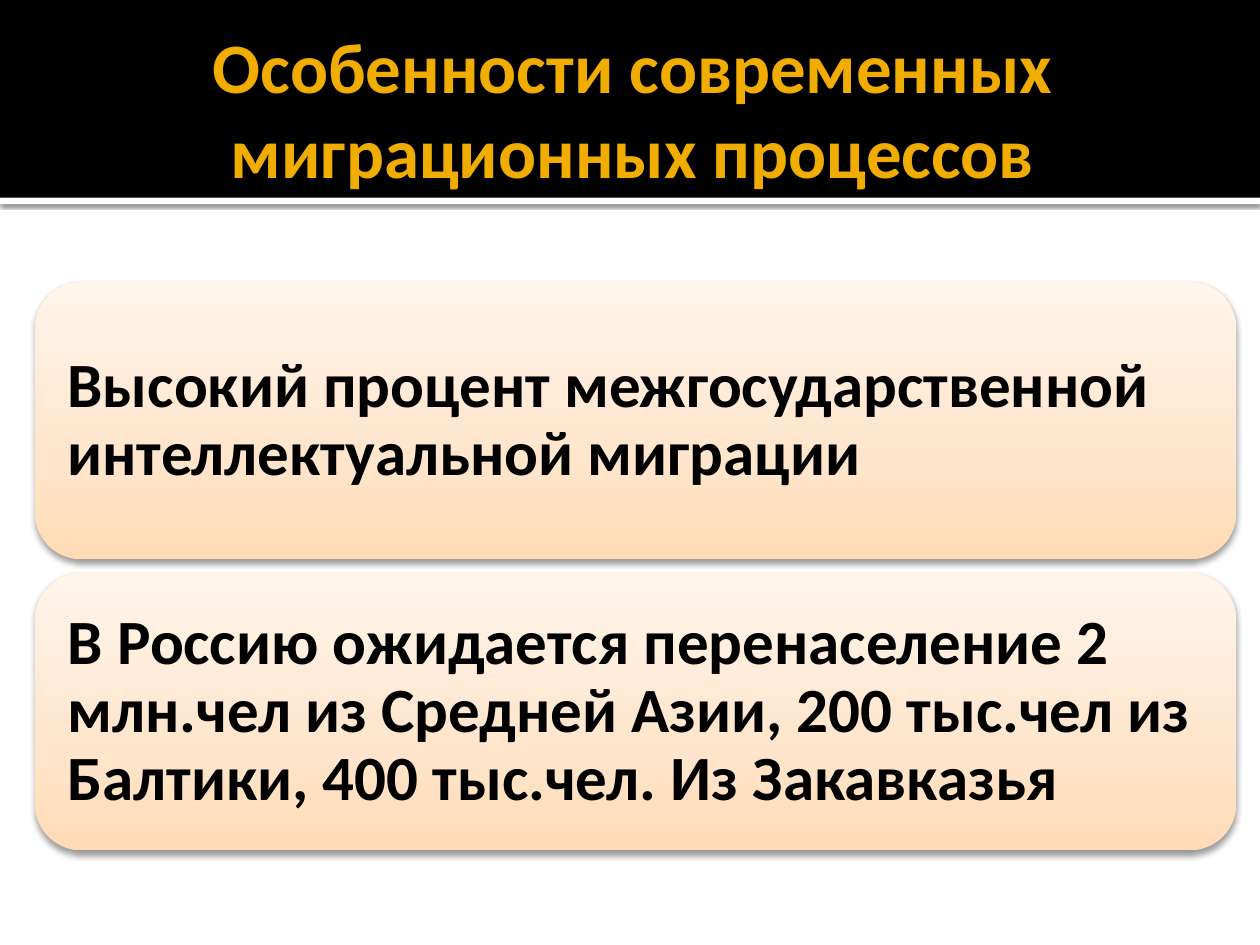
"""Build a slide on the features of modern migration processes."""
from copy import deepcopy

from lxml import etree
from pptx import Presentation
from pptx.dml.color import RGBColor
from pptx.enum.shapes import MSO_SHAPE as Preset
from pptx.enum.text import MSO_ANCHOR as Anchor, PP_ALIGN as Align
from pptx.oxml import parse_xml
from pptx.oxml.ns import nsdecls, qn
from pptx.util import Inches, Pt

COLORS = {
    "white": "FFFFFF",
    "black": "000000",
    "gold": "F0AD00",
    "peach": "FFDBB5",
    "light peach": "FFE5CB",
    "cream": "FFF5EB",
}
CARD_STOPS = [(0, "peach"), (0.35, "light peach"), (1, "cream")]
FEATURES = [
    "Высокий процент межгосударственной интеллектуальной миграции",
    "В Россию ожидается перенаселение 2 млн.чел из Средней Азии, "
    "200 тыс.чел из Балтики, 400 тыс.чел. Из Закавказья",
]


def add_panel(preset, left, top, width, height, shadow=None):
    panel = slide.shapes.add_shape(
        preset, Inches(left), Inches(top), Inches(width), Inches(height))
    panel.line.fill.background()
    panel.shadow.inherit = False
    if shadow:
        alpha, blur, distance = shadow
        panel.element.spPr.find(qn("a:effectLst")).append(parse_xml(
            f'<a:outerShdw {nsdecls("a")} blurRad="{Pt(blur)}" dist="{Pt(distance)}" '
            f'dir="5400000" rotWithShape="0"><a:srgbClr val="{COLORS["black"]}">'
            f'<a:alpha val="{alpha * 1000}"/></a:srgbClr></a:outerShdw>'))
    return panel


def write_text(box, text, size, color, align, insets, spacing):
    frame = box.text_frame
    frame.word_wrap = True
    frame.vertical_anchor = Anchor.MIDDLE
    frame.margin_left, frame.margin_top, frame.margin_right, frame.margin_bottom = map(
        Inches, insets)
    paragraph = frame.paragraphs[0]
    paragraph.text = text
    paragraph.alignment = align
    paragraph.line_spacing = spacing
    paragraph.font.name = "Calibri"
    paragraph.font.size = Pt(size)
    paragraph.font.bold = True
    paragraph.font.color.rgb = RGBColor.from_string(COLORS[color])


prs = Presentation()
prs.slide_width, prs.slide_height = Inches(10), Inches(7.5)
slide = prs.slides.add_slide(prs.slide_layouts[6])

stripe = add_panel(Preset.RECTANGLE, 0, 1.57, 10, 0.05, shadow=(60, 2.5, 0.8))
header = add_panel(Preset.RECTANGLE, 0, 0, 10, 1.57)
for band, color in ((stripe, "white"), (header, "black")):
    band.fill.solid()
    band.fill.fore_color.rgb = RGBColor.from_string(COLORS[color])

title = slide.shapes.add_textbox(Inches(0.5), Inches(0.17), Inches(9), Inches(1.37))
write_text(title, "Особенности современных миграционных процессов", 40.5, "gold",
           Align.CENTER, (0.1, 0.05, 0.05, 0.05), 1.0)

for row, feature in enumerate(FEATURES):
    card = add_panel(Preset.ROUNDED_RECTANGLE, 0.28, 2.24 + row * 2.31, 9.53, 2.2,
                     shadow=(38, 3.5, 2))
    card.fill.gradient()
    card.fill.gradient_angle = 90
    stop_list = next(card.element.spPr.iter(qn("a:gsLst")))
    stop_list.insert(1, deepcopy(stop_list[0]))
    for stop, (position, color) in zip(card.fill.gradient_stops, CARD_STOPS):
        stop.position = position
        stop.color.rgb = RGBColor.from_string(COLORS[color])
    write_text(card, feature, 36, "black", Align.LEFT, (0.15,) * 4, 0.9)

prs.save("out.pptx")
